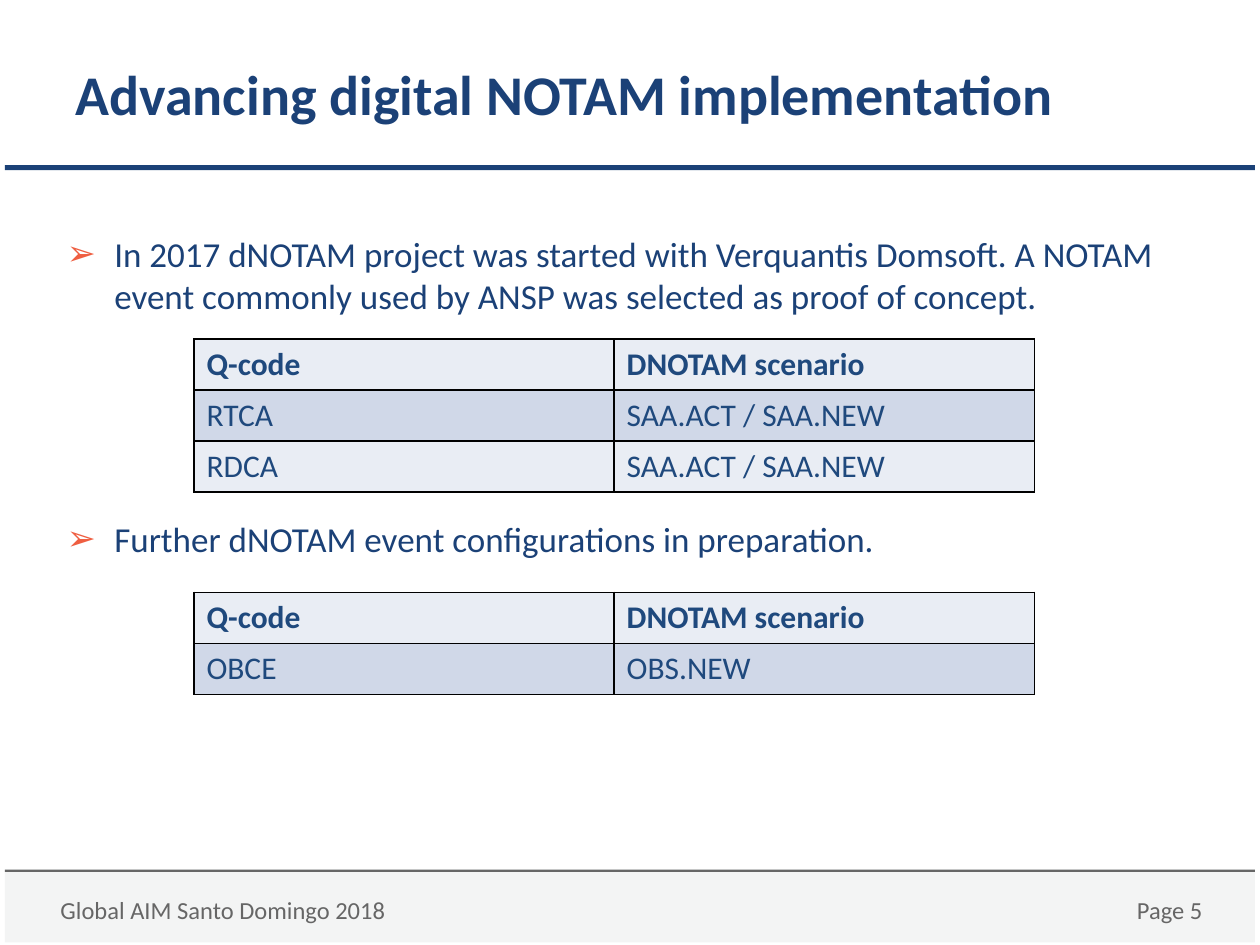
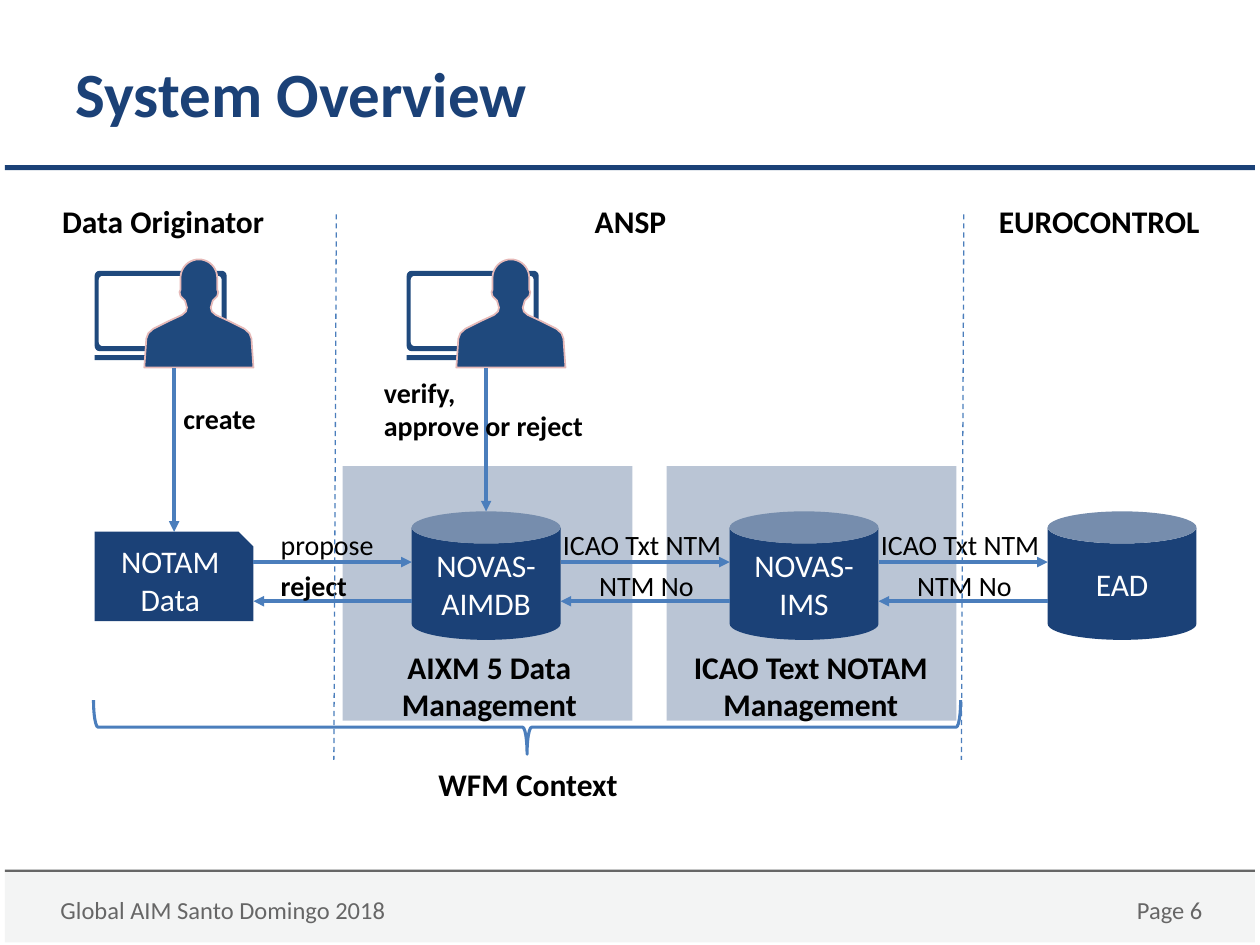
from math import cos, pi, sin

from lxml import etree
from pptx import Presentation
from pptx.dml.color import RGBColor
from pptx.enum.dml import MSO_LINE_DASH_STYLE as DASH
from pptx.enum.shapes import MSO_CONNECTOR as CONNECTOR, MSO_SHAPE as SHAPE
from pptx.enum.text import MSO_ANCHOR as ANCHOR, MSO_AUTO_SIZE as AUTO_SIZE, PP_ALIGN as ALIGN
from pptx.oxml.ns import qn
from pptx.util import Cm, Pt

COLORS = {
    "navy": "1B4177",
    "icon": "1F497D",
    "arrow": "4B7EBC",
    "bullet": "EF5E41",
    "outline": "E6B9B8",
    "grey": "666666",
    "footer": "F3F4F4",
    "light": "E9EDF4",
    "dark": "D0D8E8",
    "black": "000000",
    "white": "FFFFFF",
}
FONT = "Calibri"
TITLE_AND_BODY, TITLE_ONLY = 1, 5


def rgb(name):
    return RGBColor.from_string(COLORS[name])


def add_color(parent, name):
    fill = etree.SubElement(parent, qn("a:solidFill"))
    etree.SubElement(fill, qn("a:srgbClr"), val=COLORS[name])


def rounded_rect(x, y, w, h, r, steps=4):
    corners = [(x + w - r, y + h - r), (x + r, y + h - r), (x + r, y + r), (x + w - r, y + r)]
    return [
        (cx + r * cos(a), cy + r * sin(a))
        for quarter, (cx, cy) in enumerate(corners)
        for a in [(quarter + i / steps) * pi / 2 for i in range(steps + 1)]
    ]


class Deck:
    def __init__(self):
        self.prs = Presentation()
        self.prs.slide_width, self.prs.slide_height = Cm(25.4), Cm(19.05)
        self.slide = None

    def new_slide(self, layout, title, size, page):
        self.slide = self.prs.slides.add_slide(self.prs.slide_layouts[layout])
        self.shape(SHAPE.RECTANGLE, 0.1, 17.53, 25.2, 1.47, "footer")
        self.text("Global AIM Santo Domingo 2018", 0.97, 17.91, 14.33, 1.02, 14, "grey")
        self.text(f"Page {page}", 18.57, 17.91, 5.92, 1.02, 14, "grey", align=ALIGN.RIGHT)
        self.shape(SHAPE.RECTANGLE, 0.1, 17.53, 25.2, 0.05, "grey")
        self.shape(SHAPE.RECTANGLE, 0.1, 3.33, 25.2, 0.1, "navy")
        sp = self.slide.shapes.title
        self.place(sp, 1.27, 0.28, 22.86, 3.18)
        sp.text_frame.text = title
        sp.text_frame.auto_size = AUTO_SIZE.NONE
        sp.text_frame.vertical_anchor = ANCHOR.MIDDLE
        self.format(sp.text_frame, size, "navy", True, ALIGN.LEFT)

    def place(self, sp, x, y, w, h):
        sp.left, sp.top, sp.width, sp.height = Cm(x), Cm(y), Cm(w), Cm(h)

    def format(self, tf, size, color, bold=False, align=ALIGN.LEFT):
        for p in tf.paragraphs:
            p.alignment = align
            for r in p.runs:
                r.font.name, r.font.size, r.font.bold = FONT, Pt(size), bold
                r.font.color.rgb = rgb(color)

    def text(self, text, x, y, w, h, size, color="black", bold=False, align=ALIGN.LEFT):
        tf = self.slide.shapes.add_textbox(Cm(x), Cm(y), Cm(w), Cm(h)).text_frame
        tf.word_wrap = True
        tf.text = text
        self.format(tf, size, color, bold, align)

    def bullets(self, items, x, y, w, h, gap):
        sp = self.slide.placeholders[1]
        self.place(sp, x, y, w, h)
        tf = sp.text_frame
        tf.text = "\n".join(items)
        tf.auto_size = AUTO_SIZE.NONE
        for i, p in enumerate(tf.paragraphs):
            pPr = p._p.get_or_add_pPr()
            pPr.set("marL", str(Cm(0.96)))
            pPr.set("indent", str(-Cm(0.96)))
            bu_color = etree.SubElement(pPr, qn("a:buClr"))
            etree.SubElement(bu_color, qn("a:srgbClr"), val=COLORS["bullet"])
            etree.SubElement(pPr, qn("a:buChar"), char="➢")
            p.space_before = Pt(gap if i else 0)
        self.format(tf, 20, "navy")

    def table(self, rows, x, y, col_w=8.47, row_h=1.03):
        n_cols = len(rows[0])
        table = self.slide.shapes.add_table(
            len(rows), n_cols, Cm(x), Cm(y), Cm(col_w * n_cols), Cm(row_h * len(rows))
        ).table
        for col in table.columns:
            col.width = Cm(col_w)
        for i, values in enumerate(rows):
            table.rows[i].height = Cm(row_h)
            for cell, value in zip(table.rows[i].cells, values):
                cell.text = value
                self.format(cell.text_frame, 18, "icon", i == 0)
                tcPr = cell._tc.get_or_add_tcPr()
                for side in "LRTB":
                    ln = etree.SubElement(tcPr, qn(f"a:ln{side}"), w=str(Pt(1)))
                    add_color(ln, "black")
                cell.fill.solid()
                cell.fill.fore_color.rgb = rgb("dark" if i % 2 else "light")

    def style(self, sp, fill=None, line=None, width=1):
        sp.shadow.inherit = False
        if fill:
            sp.fill.solid()
            sp.fill.fore_color.rgb = rgb(fill)
        else:
            sp.fill.background()
        if line:
            sp.line.color.rgb = rgb(line)
            sp.line.width = Pt(width)
        else:
            sp.line.fill.background()

    def shape(self, kind, x, y, w, h, fill=None, line=None, width=1, text="", alpha=None):
        sp = self.slide.shapes.add_shape(kind, Cm(x), Cm(y), Cm(w), Cm(h))
        self.style(sp, fill, line, width)
        if alpha:
            color = sp.element.spPr.find(".//" + qn("a:srgbClr"))
            etree.SubElement(color, qn("a:alpha"), val=str(alpha * 1000))
        if text:
            tf = sp.text_frame
            tf.text = text
            tf.vertical_anchor = ANCHOR.MIDDLE
            self.format(tf, 18, "white", align=ALIGN.CENTER)
        return sp

    def freeform(self, contours, x, y, fill, line=None):
        builder = None
        for contour in contours:
            first, *rest = [(Cm(x + px), Cm(y + py)) for px, py in contour]
            if builder is None:
                builder = self.slide.shapes.build_freeform(*first)
            else:
                builder.move_to(*first)
            builder.add_line_segments(rest, close=True)
        self.style(builder.convert_to_shape(), fill, line)

    def line(self, x1, y1, x2, y2, width=2, arrow=True, target=None):
        cx = self.slide.shapes.add_connector(CONNECTOR.STRAIGHT, Cm(x1), Cm(y1), Cm(x2), Cm(y2))
        cx.line.color.rgb = rgb("arrow")
        cx.line.width = Pt(width)
        if arrow:
            etree.SubElement(cx.line._get_or_add_ln(), qn("a:tailEnd"), type="triangle")
        else:
            cx.line.dash_style = DASH.DASH
        etree.SubElement(cx._element.spPr, qn("a:effectLst"))
        if target is not None:
            cx.end_connect(target, 0)

    def user(self, x, y):
        screen = rounded_rect(0.08, 0.33, 2.48, 1.42, 0.08)
        monitor = [
            rounded_rect(0, 0.23, 2.66, 1.62, 0.1),
            screen[::-1],
            [(0, 1.93), (2.66, 1.93), (2.66, 2.03), (0, 2.03)],
        ]
        self.freeform(monitor, x, y, "icon")
        head = [(0.37 * sin(a), 0.37 - 0.37 * cos(a)) for a in [i * pi / 20 for i in range(11)]]
        right = head + [
            (0.37, 0.61), (0.39, 0.66), (0.37, 0.74), (0.32, 0.79), (0.28, 0.83),
            (0.24, 0.97), (0.26, 1.05), (0.34, 1.12), (0.6, 1.24), (0.92, 1.4),
            (1.02, 1.49), (1.06, 1.6), (1.08, 1.9), (1.1, 2.18),
        ]
        left = [(-px, py) for px, py in reversed(right[1:])]
        self.freeform([right + left], x + 2.1, y, "icon", "outline")


def notam_slide(deck):
    deck.new_slide(TITLE_AND_BODY, "Advancing digital NOTAM implementation", 32, 5)
    deck.bullets(
        [
            "In 2017 dNOTAM project was started with Verquantis Domsoft. A NOTAM "
            "event commonly used by ANSP was selected as proof of concept.",
            "Further dNOTAM event configurations in preparation.",
        ],
        1.09, 4.55, 23.04, 12.47, gap=115,
    )
    header = ("Q-code", "DNOTAM scenario")
    scenario = "SAA.ACT / SAA.NEW"
    deck.table([header, ("RTCA", scenario), ("RDCA", scenario)], 3.91, 6.83)
    deck.table([header, ("OBCE", "OBS.NEW")], 3.91, 11.94)


def overview_slide(deck):
    deck.new_slide(TITLE_ONLY, "System Overview", 36, 6)

    for x in (6.91, 13.44):
        deck.shape(SHAPE.RECTANGLE, x, 9.4, 5.84, 5.13, "navy", alpha=30)
    for x, owner in ((0.89, "Data Originator"), (10.31, "ANSP"), (19.76, "EUROCONTROL")):
        deck.text(owner, x, 3.94, 4.8, 1.02, 18, bold=True, align=ALIGN.CENTER)

    user_xs = (1.91, 8.2)
    for x in user_xs:
        deck.user(x, 5.23)

    data_x, data_w, can_w = 1.91, 3.2, 3
    can_xs = [8.3 + 6.41 * i for i in range(3)]
    data = deck.shape(SHAPE.SNIP_1_RECTANGLE, data_x, 10.72, data_w, 1.8, "navy", text="NOTAM\nData")
    for x, system in zip(can_xs, ("NOVAS-AIMDB", "NOVAS-IMS", "EAD")):
        deck.shape(SHAPE.CAN, x, 10.31, can_w, 2.59, "navy", text=system)

    deck.line(user_xs[0] + 1.6, 7.42, user_xs[0] + 1.6, 10.72, target=data)
    deck.line(user_xs[1] + 1.6, 7.42, user_xs[1] + 1.6, 10.31)

    starts = [data_x + data_w] + [x + can_w for x in can_xs[:2]]
    for start, end in zip(starts, can_xs):
        deck.line(start, 11.33, end, 11.33)
        deck.line(end, 12.12, start, 12.12)

    deck.text("propose", 5.41, 10.52, 2.69, 0.94, 16)
    deck.text("reject", 5.41, 11.33, 2.69, 0.94, 16, bold=True)
    for start in starts[1:]:
        deck.text("ICAO Txt NTM", start - 0.2, 10.52, 3.86, 0.94, 16)
        deck.text("NTM No", start - 0.2, 11.34, 3.86, 0.94, 16, align=ALIGN.CENTER)
    deck.text("verify,\napprove or reject", 7.49, 7.44, 5.13, 1.63, 16, bold=True)
    deck.text("create", 3.45, 7.98, 2.69, 0.94, 16, bold=True)

    for x in (6.78, 19.43):
        deck.line(x, 4.32, x - 0.05, 15.32, width=0.75, arrow=False)
    brace = deck.shape(SHAPE.RIGHT_BRACE, 10.08, 5.92, 1.09, 17.48, line="arrow", width=1.75)
    brace.rotation = 90

    captions = (
        ("WFM Context", 7.75, 15.29, 5.79, 1.02),
        ("AIXM 5 Data Management", 7.11, 12.93, 5.51, 1.8),
        ("ICAO Text NOTAM\nManagement", 13.59, 12.93, 5.51, 1.8),
    )
    for caption, *box in captions:
        deck.text(caption, *box, 18, bold=True, align=ALIGN.CENTER)


def main():
    deck = Deck()
    notam_slide(deck)
    overview_slide(deck)
    deck.prs.save("out.pptx")


if __name__ == "__main__":
    main()
